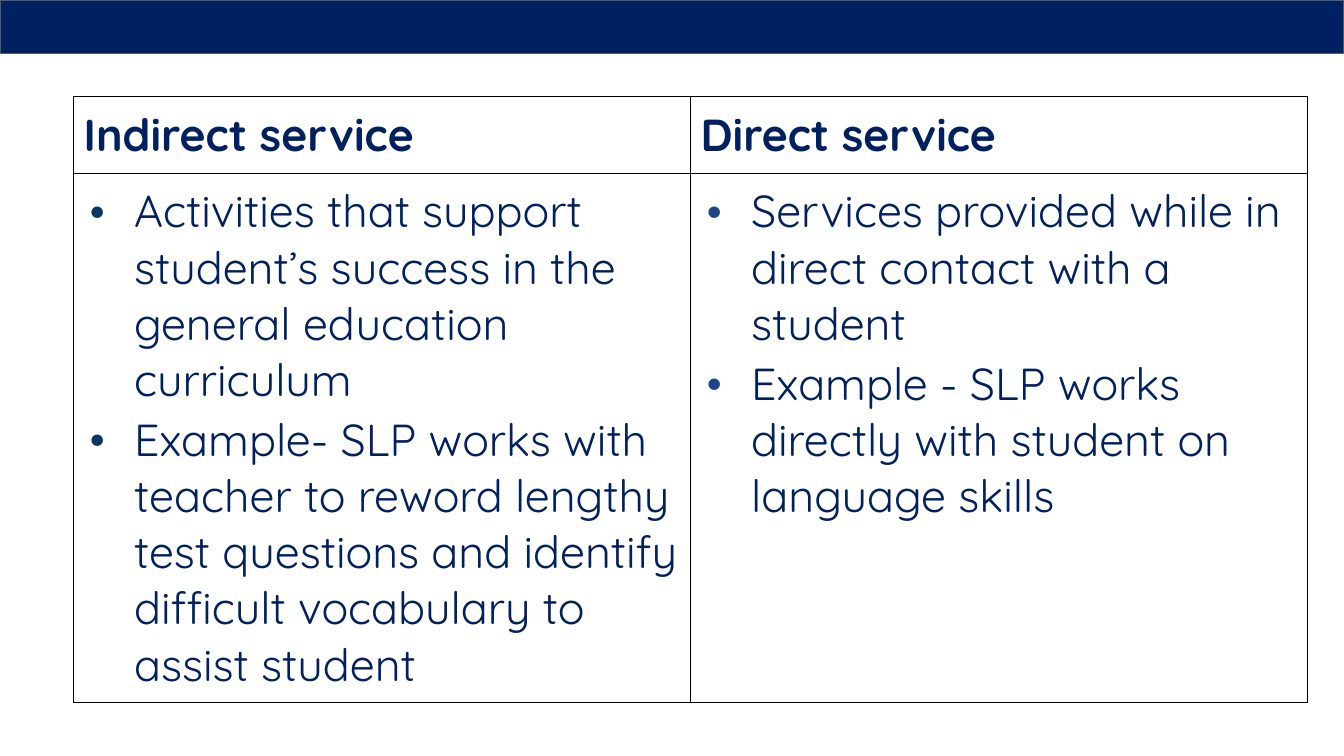
"""Build a slide that compares indirect and direct service."""
from dataclasses import dataclass

from lxml.etree import SubElement as Sub
from pptx import Presentation as Deck
from pptx.dml.color import RGBColor as Color
from pptx.enum.shapes import MSO_SHAPE as Shape
from pptx.oxml.ns import qn
from pptx.slide import Slide
from pptx.table import _Cell as Cell
from pptx.text.text import _Paragraph as Para
from pptx.util import Inches, Pt


@dataclass(frozen=True)
class Theme:
    font: str = "Quicksand"
    size: float = 32
    gap: float = 3
    rule: float = 0.75
    edge: float = 1
    navy: str = "002060"
    grey: str = "525F61"
    white: str = "FFFFFF"
    black: str = "000000"


@dataclass(frozen=True)
class Column:
    title: str
    dot: str
    points: tuple[str, ...]


THEME = Theme()
COLUMNS = (
    Column("Indirect service", "073763", (
        "Activities that support student’s success in the general education curriculum",
        "Example- SLP works with teacher to reword lengthy test questions "
        "and identify difficult vocabulary to assist student",
    )),
    Column("Direct service", "1C4587", (
        "Services provided while in direct contact with a student",
        "Example - SLP works directly with student on language skills",
    )),
)


def add_band(slide: Slide, width: int) -> None:
    band = slide.shapes.add_shape(Shape.RECTANGLE, 0, 0, width, Inches(0.53))
    band.shadow.inherit = False
    band.fill.solid()
    band.fill.fore_color.rgb = Color.from_string(THEME.navy)
    band.line.color.rgb = Color.from_string(THEME.grey)
    band.line.width = Pt(THEME.edge)


def style_cell(cell: Cell) -> None:
    props = cell._tc.get_or_add_tcPr()
    for side in ("lnL", "lnR", "lnT", "lnB"):
        line = Sub(props, qn(f"a:{side}"), w=str(Pt(THEME.rule)))
        Sub(Sub(line, qn("a:solidFill")), qn("a:srgbClr"), val=THEME.black)
    cell.fill.solid()
    cell.fill.fore_color.rgb = Color.from_string(THEME.white)
    cell.margin_left = cell.margin_right = Inches(0.1)
    cell.margin_top = cell.margin_bottom = Inches(0.1)


def add_dot(para: Para, dot: str) -> None:
    props = para._p.get_or_add_pPr()
    props.set("marL", str(Inches(0.5)))
    props.set("indent", str(Inches(-0.44)))
    Sub(Sub(props, qn("a:buClr")), qn("a:srgbClr"), val=dot)
    Sub(props, qn("a:buFont"), typeface=THEME.font)
    Sub(props, qn("a:buChar"), char="•")


def add_text(para: Para, text: str, bold: bool) -> None:
    run = para.add_run()
    run.text = text
    run.font.name = THEME.font
    run.font.size = Pt(THEME.size)
    run.font.bold = bold
    run.font.color.rgb = Color.from_string(THEME.navy)


def fill_head(cell: Cell, title: str) -> None:
    style_cell(cell)
    add_text(cell.text_frame.paragraphs[0], title, True)


def fill_body(cell: Cell, column: Column) -> None:
    style_cell(cell)
    frame = cell.text_frame
    for index, point in enumerate(column.points):
        para = frame.add_paragraph() if index else frame.paragraphs[0]
        add_dot(para, column.dot)
        para.space_before = Pt(THEME.gap if index else 0)
        add_text(para, point, False)


def add_grid(slide: Slide) -> None:
    frame = slide.shapes.add_table(
        2, len(COLUMNS), Inches(0.73), Inches(0.96), Inches(12.24), Inches(5.94))
    table = frame.table
    table.first_row = table.horz_banding = False
    for row, height in zip(table.rows, (0.69, 5.25)):
        row.height = Inches(height)
    for index, column in enumerate(COLUMNS):
        table.columns[index].width = Inches(6.12)
        fill_head(table.cell(0, index), column.title)
        fill_body(table.cell(1, index), column)


def main() -> None:
    deck = Deck()
    deck.slide_width, deck.slide_height = Inches(13.33), Inches(7.5)
    slide = deck.slides.add_slide(deck.slide_layouts[6])
    add_band(slide, deck.slide_width)
    add_grid(slide)
    deck.save("out.pptx")


if __name__ == "__main__":
    main()
